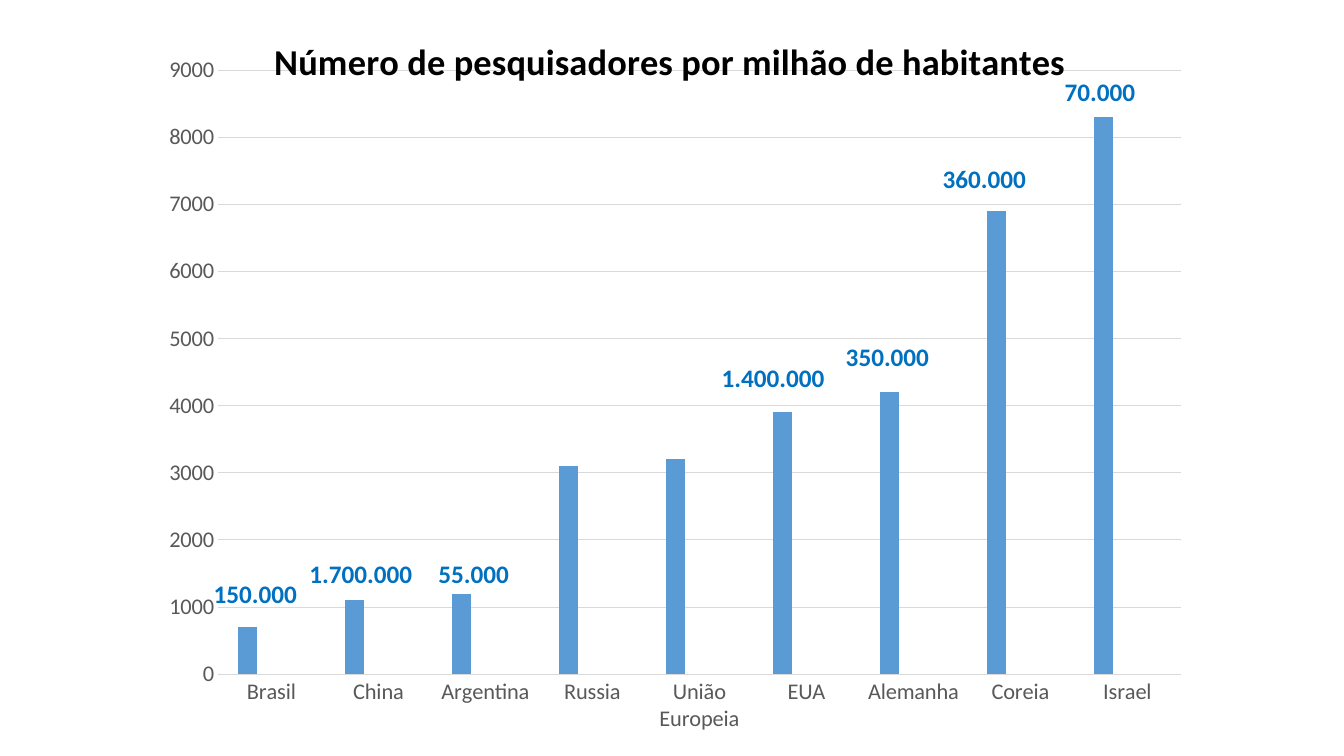
from dataclasses import dataclass

from lxml import etree
from pptx import Presentation
from pptx.chart.data import CategoryChartData
from pptx.dml.color import RGBColor
from pptx.enum.chart import XL_CHART_TYPE as ChartType, XL_TICK_MARK as TickMark
from pptx.enum.text import MSO_AUTO_SIZE as AutoSize
from pptx.oxml.ns import qn
from pptx.util import Inches, Pt


@dataclass(frozen=True)
class Theme:
    """Colours, font and type sizes of the slide."""
    font: str = "Calibri"
    ink: str = "000000"
    axis: str = "595959"
    grid: str = "D9D9D9"
    label: str = "0070C0"
    series: tuple = ("5B9BD5", "ED7D31", "A5A5A5")
    title_size: int = 26
    label_size: int = 18
    axis_size: int = 16
    line_width: float = 0.75


THEME = Theme()
WIDTH, HEIGHT = Inches(13.33), Inches(7.5)

TITLE = "Número de pesquisadores por milhão de habitantes"
RESEARCHERS_PER_MILLION = {
    "Brasil": 700,
    "China": 1100,
    "Argentina": 1200,
    "Russia": 3100,
    "União Europeia": 3200,
    "EUA": 3900,
    "Alemanha": 4200,
    "Coreia": 6900,
    "Israel": 8300,
}
LABEL_HEIGHT = 5.33
TOTAL_LABELS = [
    ("70.000", 78.47, 9.47, 6.83),
    ("1.700.000", 22.28, 73.2, 9.23),
    ("1.400.000", 52.96, 47.33, 9.23),
    ("150.000", 15.15, 75.87, 7.75),
    ("360.000", 69.39, 20.93, 7.8),
    ("350.000", 62.19, 44.53, 7.8),
    ("55.000", 31.88, 73.2, 6.83),
]


def place(left, top, width, height):
    """Turn percentages of the slide into lengths."""
    return (int(WIDTH * left / 100), int(HEIGHT * top / 100),
            int(WIDTH * width / 100), int(HEIGHT * height / 100))


def style_font(font, size, color, bold=False):
    """Apply the theme font with a size and a colour."""
    font.name, font.size, font.bold = THEME.font, Pt(size), bold
    font.color.rgb = RGBColor.from_string(color)


def style_line(line):
    """Draw a thin line in the grid colour."""
    line.width = Pt(THEME.line_width)
    line.color.rgb = RGBColor.from_string(THEME.grid)


def set_layout(parent, index, **settings):
    """Give a chart part a manual layout at the given child index."""
    for old in parent.findall(qn("c:layout")):
        parent.remove(old)
    layout = etree.Element(qn("c:layout"))
    manual = etree.SubElement(layout, qn("c:manualLayout"))
    for name, value in settings.items():
        etree.SubElement(manual, qn(f"c:{name}")).set("val", str(value))
    parent.insert(index, layout)


def style_axis(axis):
    """Style the tick labels of an axis and hide its tick marks."""
    axis.major_tick_mark = axis.minor_tick_mark = TickMark.NONE
    style_font(axis.tick_labels.font, THEME.axis_size, THEME.axis)


def add_title(chart):
    """Write the chart title over the top of the plot."""
    frame = chart.chart_title.text_frame
    frame.text = TITLE
    style_font(frame.paragraphs[0].font, THEME.title_size, THEME.ink, bold=True)
    set_layout(chart.chart_title._element, 1,
               xMode="edge", yMode="edge", x=0.12, y=0.04)


def add_column_chart(slide):
    """Add the column chart of researchers per country."""
    data = CategoryChartData(number_format="General")
    data.categories = list(RESEARCHERS_PER_MILLION)
    empty = [None] * len(RESEARCHERS_PER_MILLION)
    columns = [list(RESEARCHERS_PER_MILLION.values()), empty, empty]
    for number, values in enumerate(columns, start=1):
        data.add_series(f"Series {number}", values)
    chart = slide.shapes.add_chart(
        ChartType.COLUMN_CLUSTERED, *place(10.5, 0, 78.39, 100), data).chart
    style_font(chart.font, THEME.axis_size, THEME.ink)
    chart.has_legend = False
    add_title(chart)

    plot = chart.plots[0]
    plot.gap_width, plot.overlap, plot.vary_by_categories = 219, -27, False
    for series, color in zip(plot.series, THEME.series):
        series.format.fill.solid()
        series.format.fill.fore_color.rgb = RGBColor.from_string(color)

    style_axis(chart.category_axis)
    style_line(chart.category_axis.format.line)
    value_axis = chart.value_axis
    style_axis(value_axis)
    value_axis.minimum_scale, value_axis.maximum_scale = 0, 9000
    value_axis.major_unit = 1000
    value_axis.format.line.fill.background()
    style_line(value_axis.major_gridlines.format.line)
    set_layout(chart._chartSpace.chart.plotArea, 0, layoutTarget="inner",
               xMode="edge", yMode="edge", x=0.073, y=0.093, w=0.914, h=0.799)


def add_total_label(slide, text, left, top, width):
    """Add a bold total above a column."""
    box = slide.shapes.add_textbox(*place(left, top, width, LABEL_HEIGHT))
    frame = box.text_frame
    frame.word_wrap = False
    frame.auto_size = AutoSize.SHAPE_TO_FIT_TEXT
    frame.text = text
    style_font(frame.paragraphs[0].font, THEME.label_size, THEME.label, bold=True)


def main():
    """Build the slide and save it."""
    presentation = Presentation()
    presentation.slide_width, presentation.slide_height = WIDTH, HEIGHT
    slide = presentation.slides.add_slide(presentation.slide_layouts[6])
    add_column_chart(slide)
    for label in TOTAL_LABELS:
        add_total_label(slide, *label)
    presentation.save("out.pptx")


if __name__ == "__main__":
    main()
